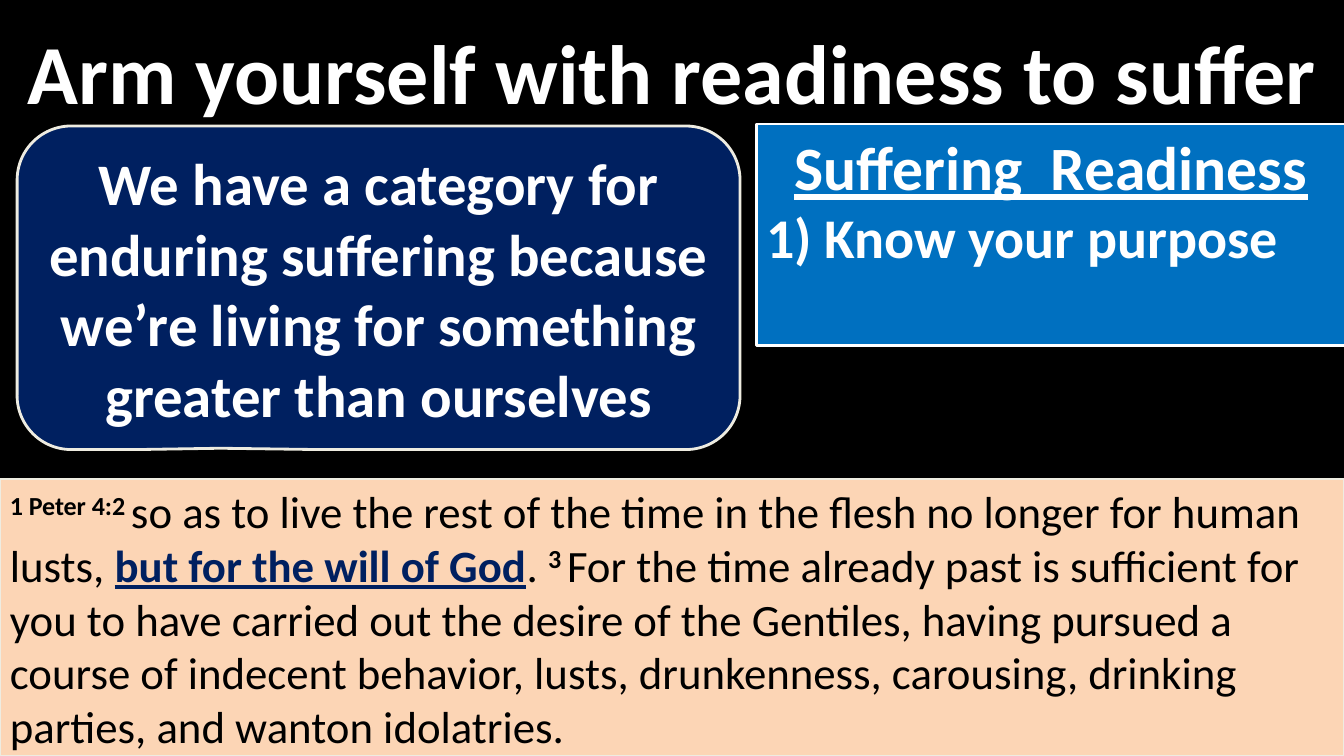
from pptx import Presentation
from pptx.dml.color import RGBColor
from pptx.enum.shapes import MSO_SHAPE as Preset
from pptx.enum.text import MSO_ANCHOR as Anchor, MSO_AUTO_SIZE as AutoSize, PP_ALIGN as Align
from pptx.util import Inches, Pt

TITLE = "Arm yourself with readiness to suffer"
KEY_THOUGHT = ("We have a category for enduring suffering because "
               "we’re living for something greater than ourselves")
CHECKLIST_HEADING = "Suffering  Readiness"
CHECKLIST_ITEM = "1) Know your purpose"
# Each run of the passage: text, style
PASSAGE = [
    ("1 Peter 4:2 ", "verse"),
    ("so as to live the rest of the time in the flesh no longer for human lusts, ", "scripture"),
    ("but for the will of God", "emphasis"),
    (". ", "scripture"),
    ("3 ", "verse"),
    ("For the time already past is sufficient for you to have carried out the desire "
     "of the Gentiles, having pursued a course of indecent behavior, lusts, drunkenness, "
     "carousing, drinking parties, and wanton idolatries.", "scripture"),
]

THEME = {
    "font": "Calibri",
    "black": "000000", "white": "FFFFFF", "navy": "002060",
    "blue": "0070C0", "peach": "FCD5B5", "ivory": "EEECE1",
    "styles": {
        "title": {"size": 60, "color": "white", "bold": True},
        "thought": {"size": 42, "color": "white", "bold": True},
        "heading": {"size": 44, "color": "white", "bold": True, "underline": True},
        "item": {"size": 40, "color": "white", "bold": True},
        "scripture": {"size": 32, "color": "black", "bold": False},
        "verse": {"size": 32, "color": "black", "bold": True, "raised": 30},
        "emphasis": {"size": 32, "color": "navy", "bold": True, "underline": True},
    },
}
WIDTH, HEIGHT = 13.33, 7.5
PASSAGE_TOP = 4.75
CALLOUT_TAIL = (-0.219, 0.496, 0.167)

# Each panel: preset, box, fill, line, line width, anchor, paragraphs of (alignment, runs)
PANELS = [
    (Preset.RECTANGLE, (0, PASSAGE_TOP, WIDTH, HEIGHT - PASSAGE_TOP), "peach", "ivory", 1.5,
     Anchor.TOP, [(Align.LEFT, PASSAGE)]),
    (Preset.RECTANGLE, (7.5, 1.23, 5.85, 2.2), "blue", "white", 2, Anchor.TOP,
     [(Align.CENTER, [(CHECKLIST_HEADING, "heading")]),
      (Align.LEFT, [(CHECKLIST_ITEM, "item")])]),
    (Preset.ROUNDED_RECTANGULAR_CALLOUT, (0.17, 1.25, 7.17, 3.21), "navy", "ivory", 2,
     Anchor.MIDDLE, [(Align.CENTER, [(KEY_THOUGHT, "thought")])]),
]


def color(name):
    return RGBColor.from_string(THEME[name])


def write(frame, anchor, paragraphs):
    frame.word_wrap = True
    frame.auto_size = AutoSize.NONE
    frame.vertical_anchor = anchor
    for index, (alignment, runs) in enumerate(paragraphs):
        paragraph = frame.add_paragraph() if index else frame.paragraphs[0]
        paragraph.alignment = alignment
        for words, style_name in runs:
            style = THEME["styles"][style_name]
            run = paragraph.add_run()
            run.text = words
            formats = {"name": THEME["font"], "size": Pt(style["size"]),
                       "bold": style["bold"], "underline": style.get("underline", False)}
            for attribute, value in formats.items():
                setattr(run.font, attribute, value)
            run.font.color.rgb = color(style["color"])
            if "raised" in style:
                run.font._element.set("baseline", str(style["raised"] * 1000))


def add_panel(slide, preset, box, fill, line, line_width, anchor, paragraphs):
    panel = slide.shapes.add_shape(preset, *map(Inches, box))
    panel.shadow.inherit = False
    panel.fill.solid()
    panel.fill.fore_color.rgb = color(fill)
    panel.line.color.rgb = color(line)
    panel.line.width = Pt(line_width)
    if preset == Preset.ROUNDED_RECTANGULAR_CALLOUT:
        for index, value in enumerate(CALLOUT_TAIL):
            panel.adjustments[index] = value
    write(panel.text_frame, anchor, paragraphs)


def main():
    deck = Presentation()
    deck.slide_width, deck.slide_height = Inches(WIDTH), Inches(HEIGHT)
    slide = deck.slides.add_slide(deck.slide_layouts[5])
    slide.background.fill.solid()
    slide.background.fill.fore_color.rgb = color("black")

    title = slide.shapes.title
    title.left, title.top, title.width, title.height = map(Inches, (0, 0.29, WIDTH, 0.83))
    write(title.text_frame, Anchor.MIDDLE, [(Align.CENTER, [(TITLE, "title")])])
    for panel in PANELS:
        add_panel(slide, *panel)
    deck.save("out.pptx")


if __name__ == "__main__":
    main()
